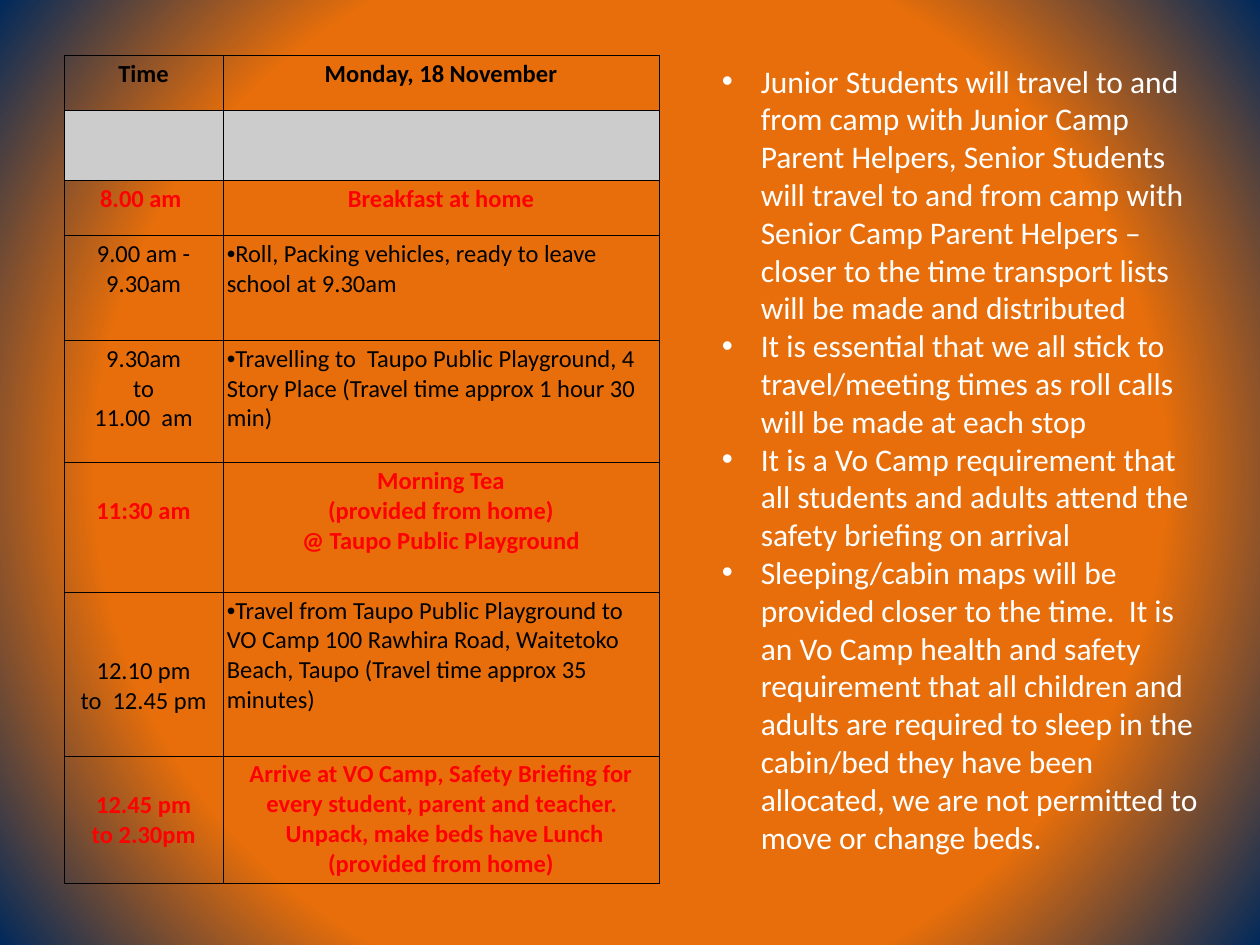
from lxml.etree import SubElement
from pptx import Presentation
from pptx.dml.color import RGBColor
from pptx.enum.text import PP_ALIGN
from pptx.oxml.ns import qn
from pptx.util import Inches, Pt

INK = {"orange": "E76E0A", "navy": "00295C", "black": "000000",
       "red": "FF0000", "white": "FFFFFF", "grey": "CCCCCC"}


def style(para, text, size, color, bold=False):
    para.text = text
    font = para.font
    font.name, font.size, font.bold = "Calibri", Pt(size), bold
    font.color.rgb = RGBColor.from_string(INK[color])


def indent(para, left, first, bullet=False):
    """Set the left margin and first-line indent in inches."""
    props = para._p.get_or_add_pPr()
    props.set("marL", str(Inches(left)))
    props.set("indent", str(Inches(first)))
    if bullet:
        SubElement(props, qn("a:buFont")).set("typeface", "Arial")
        SubElement(props, qn("a:buChar")).set("char", "•")
        # Bullets must come before the default run properties.
        run = props.find(qn("a:defRPr"))
        if run is not None:
            props.append(run)


prs = Presentation()
prs.slide_width, prs.slide_height = Inches(10), Inches(7.5)
slide = prs.slides.add_slide(prs.slide_layouts[6])

# Round gradient behind everything
back = slide.background.fill
back.gradient()
for stop, place, color in zip(back.gradient_stops, (0.68, 1), ("orange", "navy")):
    stop.position = place
    stop.color.rgb = RGBColor.from_string(INK[color])
grad = slide.background._cSld.find(".//" + qn("a:gradFill"))
grad.remove(grad.find(qn("a:lin")))
ring = SubElement(grad, qn("a:path"), path="circle")
SubElement(ring, qn("a:fillToRect"), l="50000", t="50000", r="50000", b="50000")

# Timetable: height, kind, time lines, lines above the time, plan lines
rows = [
    (0.44, "head", ["Time"], 0, ["Monday, 18 November"]),
    (0.55, "blank", [], 0, []),
    (0.44, "meal", ["8.00 am "], 0, ["Breakfast at home"]),
    (0.83, "trip", ["9.00 am - 9.30am"], 0,
     ["Roll, Packing vehicles, ready to leave school at 9.30am"]),
    (0.97, "trip", ["9.30am", "to", "11.00  am"], 0,
     ["Travelling to  Taupo Public Playground, 4 Story Place "
      "(Travel time approx 1 hour 30 min)"]),
    (1.03, "meal", ["11:30 am"], 1,
     ["Morning Tea", "(provided from home)", "@ Taupo Public Playground"]),
    (1.3, "trip", ["12.10 pm", "to  12.45 pm"], 2,
     ["Travel from Taupo Public Playground to VO Camp 100 Rawhira Road, "
      "Waitetoko Beach, Taupo (Travel time approx 35 minutes)"]),
    (1.01, "stay", ["12.45 pm", "to 2.30pm"], 1,
     ["Arrive at VO Camp, Safety Briefing for every student, parent and "
      "teacher.  Unpack, make beds have Lunch", "(provided from home)"]),
]
tones = {"head": "black", "trip": "black", "meal": "red", "stay": "red"}
pad, line = 0.03, 0.24

table = slide.shapes.add_table(len(rows), 2, Inches(0.51), Inches(0.44),
                               Inches(4.72), Inches(6.57)).table
table.first_row = table.horz_banding = False
for col, width in zip(table.columns, (1.26, 3.46)):
    col.width = Inches(width)

for row, (height, kind, time, skip, plan) in zip(table.rows, rows):
    row.height = Inches(height)
    for cell, lines, drop in zip(row.cells, (time, plan), (skip, 0)):
        props = cell._tc.get_or_add_tcPr()
        for side in ("a:lnL", "a:lnR", "a:lnT", "a:lnB"):
            edge = SubElement(props, qn(side), w=str(Pt(0.5)))
            fill = SubElement(edge, qn("a:solidFill"))
            SubElement(fill, qn("a:srgbClr"), val=INK["black"])
        if kind == "blank":
            cell.fill.solid()
            cell.fill.fore_color.rgb = RGBColor.from_string(INK["grey"])
            continue
        cell.fill.background()
        cell.margin_left = cell.margin_right = cell.margin_bottom = Inches(pad)
        cell.margin_top = Inches(pad + drop * line)
        frame = cell.text_frame
        for i, text in enumerate(lines):
            para = frame.add_paragraph() if i else frame.paragraphs[0]
            style(para, text, 14, tones[kind], kind != "trip")
            if kind == "trip" and lines is plan:
                indent(para, 0, 0, True)
                continue
            para.alignment = PP_ALIGN.CENTER
            if kind == "stay" and lines is plan:
                indent(para, 0.06, -0.12)

# Notes for families
notes = [
    "Junior Students will travel to and from camp with Junior Camp Parent "
    "Helpers, Senior Students will travel to and from camp with Senior Camp "
    "Parent Helpers – closer to the time transport lists will be made and "
    "distributed",
    "It is essential that we all stick to travel/meeting times as roll calls "
    "will be made at each stop",
    "It is a Vo Camp requirement that all students and adults attend the "
    "safety briefing on arrival",
    "Sleeping/cabin maps will be provided closer to the time.  It is an Vo "
    "Camp health and safety requirement that all children and adults are "
    "required to sleep in the cabin/bed they have been allocated, we are not "
    "permitted to move or change beds.",
]
frame = slide.shapes.add_textbox(Inches(5.63), Inches(0.44), Inches(4.02),
                                 Inches(6.46)).text_frame
frame.word_wrap = True
for i, text in enumerate(notes):
    para = frame.add_paragraph() if i else frame.paragraphs[0]
    style(para, text, 18, "white")
    indent(para, 0.31, -0.31, True)

prs.save("out.pptx")
